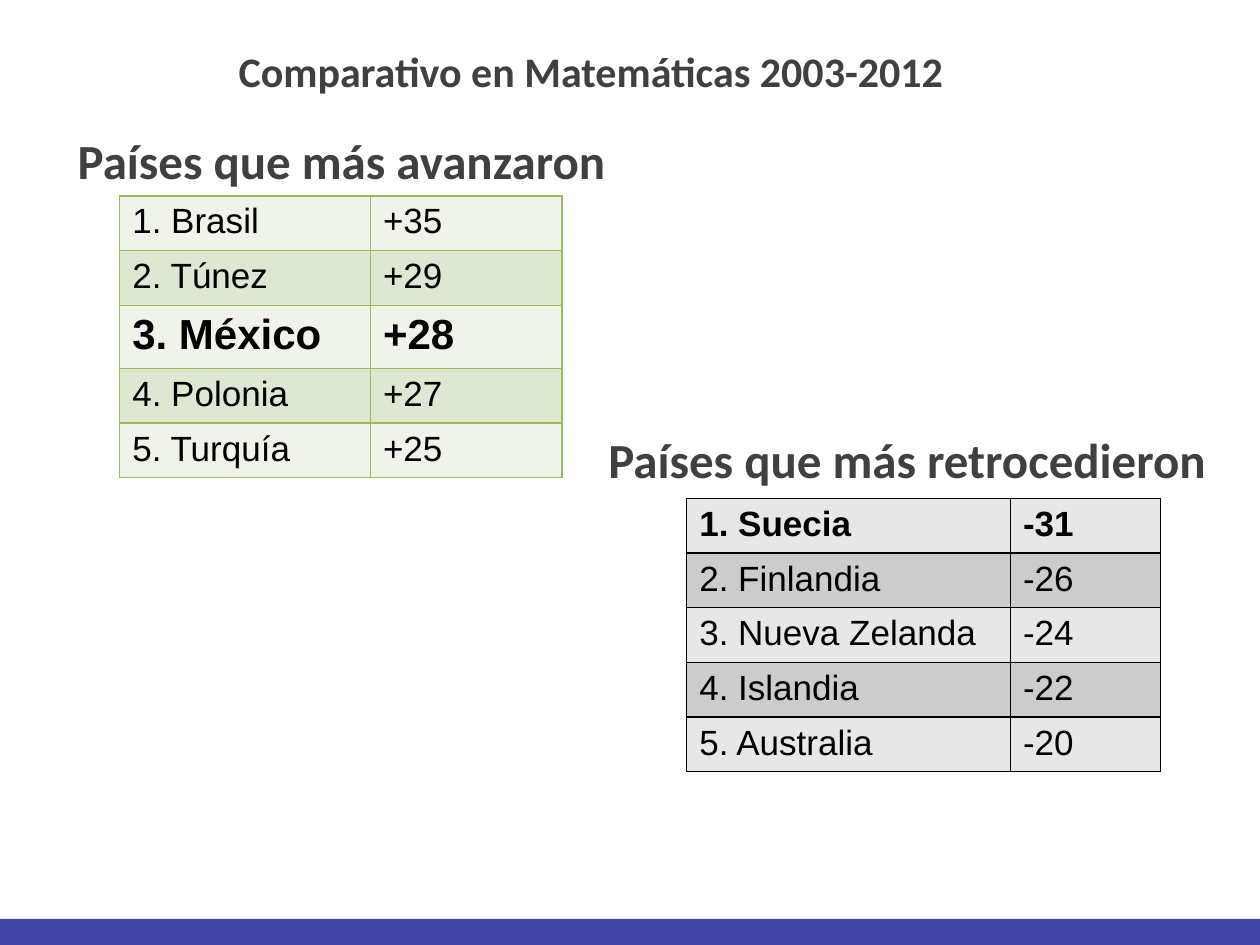
from lxml.etree import SubElement
from pptx import Presentation
from pptx.dml.color import RGBColor
from pptx.enum.shapes import MSO_SHAPE
from pptx.enum.text import MSO_ANCHOR, PP_ALIGN
from pptx.oxml.ns import qn
from pptx.util import Pt

BLACK = RGBColor(0x00, 0x00, 0x00)
GRAY = RGBColor(0x40, 0x40, 0x40)
INDIGO = RGBColor(0x41, 0x46, 0xA7)
GREEN = RGBColor(0x9B, 0xBB, 0x59)
GREEN_BANDS = RGBColor(0xEF, 0xF3, 0xEA), RGBColor(0xDE, 0xE7, 0xD1)
GRAY_BANDS = RGBColor(0xE7, 0xE7, 0xE7), RGBColor(0xCC, 0xCC, 0xCC)


class Deck:
    heading_font = {"name": "Calibri", "bold": True}
    cell_font = {"name": "Arial", "size": Pt(20), "bold": False}

    def __init__(self, width, height):
        self.prs = Presentation()
        self.prs.slide_width, self.prs.slide_height = Pt(width), Pt(height)
        self.s = self.prs.slides.add_slide(self.prs.slide_layouts[6])

    def add_text(self, p, text, color, **font):
        r = p.add_run()
        r.text = text
        for name, value in font.items():
            setattr(r.font, name, value)
        r.font.color.rgb = color

    def bar(self, x, y, w, h, color):
        sp = self.s.shapes.add_shape(MSO_SHAPE.RECTANGLE, Pt(x), Pt(y), Pt(w), Pt(h))
        sp.shadow.inherit = False
        sp.fill.solid()
        sp.fill.fore_color.rgb = color
        sp.line.fill.background()

    def heading(self, x, y, w, h, text, size):
        tf = self.s.shapes.add_textbox(Pt(x), Pt(y), Pt(w), Pt(h)).text_frame
        tf.word_wrap = True
        tf.vertical_anchor = MSO_ANCHOR.TOP
        p = tf.paragraphs[0]
        p.alignment = PP_ALIGN.CENTER
        self.add_text(p, text, GRAY, size=Pt(size), **self.heading_font)

    def borders(self, cell, color):
        tc_pr = cell._tc.get_or_add_tcPr()
        for side in ("a:lnL", "a:lnR", "a:lnT", "a:lnB"):
            ln = SubElement(tc_pr, qn(side), w=str(Pt(1)))
            fill = SubElement(ln, qn("a:solidFill"))
            SubElement(fill, qn("a:srgbClr"), val=str(color))

    def ranking(self, x, y, widths, heights, rows, bands, line, featured):
        tbl = self.s.shapes.add_table(
            len(rows), len(widths), Pt(x), Pt(y), Pt(sum(widths)), Pt(sum(heights))
        ).table
        tbl.first_row = tbl.horz_banding = False
        for col, width in zip(tbl.columns, widths):
            col.width = Pt(width)
        for i, (row, height, values) in enumerate(zip(tbl.rows, heights, rows)):
            row.height = Pt(height)
            font = {**self.cell_font, **featured.get(i, {})}
            for cell, value in zip(row.cells, values):
                self.borders(cell, line)
                cell.fill.solid()
                cell.fill.fore_color.rgb = bands[i % 2]
                self.add_text(cell.text_frame.paragraphs[0], value, BLACK, **font)


def main():
    deck = Deck(720, 540)
    deck.bar(0, 525, 720, 15, INDIGO)
    deck.heading(96.5, 22.3, 482.4, 49, "Comparativo en Matemáticas 2003-2012", 24)
    deck.heading(21.6, 71.3, 347, 38.2, "Países que más avanzaron", 28)
    deck.ranking(
        68.4, 112, (143.3, 109.4), (31.1, 31.1, 35.7, 31.1, 31.1),
        [("1. Brasil", "+35"), ("2. Túnez", "+29"), ("3. México", "+28"),
         ("4. Polonia", "+27"), ("5. Turquía", "+25")],
        GREEN_BANDS, GREEN, {2: {"size": Pt(24), "bold": True}},
    )
    deck.heading(336.2, 241.9, 364.3, 38.2, "Países que más retrocedieron", 28)
    deck.ranking(
        392.4, 284.8, (185, 85.7), (29.6,) * 5,
        [("1. Suecia", "-31"), ("2. Finlandia", "-26"), ("3. Nueva Zelanda", "-24"),
         ("4. Islandia", "-22"), ("5. Australia", "-20")],
        GRAY_BANDS, BLACK, {0: {"bold": True}},
    )
    deck.prs.save("out.pptx")


if __name__ == "__main__":
    main()
